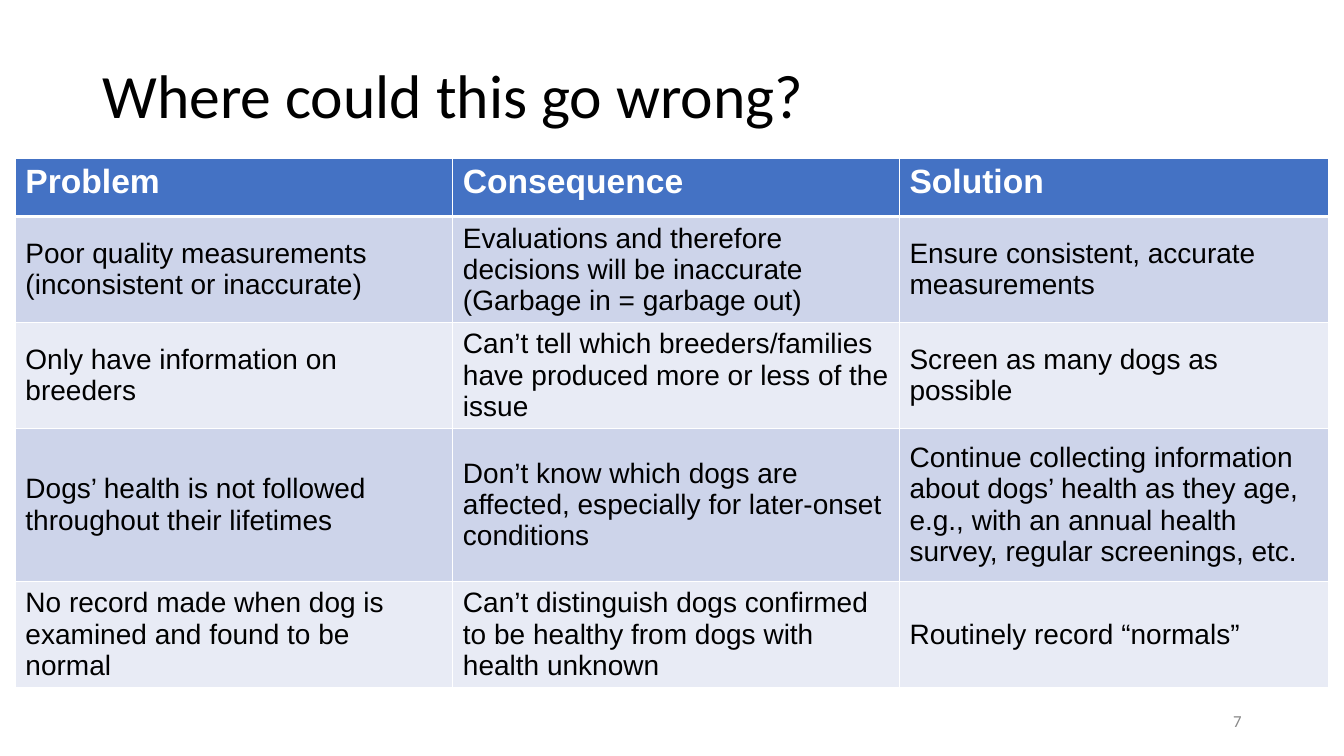
"""Build the slide on what can go wrong when screening dogs."""
from lxml import etree
from pptx import Presentation
from pptx.dml.color import RGBColor
from pptx.enum.text import MSO_ANCHOR, PP_ALIGN
from pptx.oxml.ns import qn
from pptx.util import Pt

TOP, MID = MSO_ANCHOR.TOP, MSO_ANCHOR.MIDDLE
LEFT, RIGHT = PP_ALIGN.LEFT, PP_ALIGN.RIGHT

TITLE = "Where could this go wrong?"
NUMBER = "7"
ROWS = [
    ("Problem", "Consequence", "Solution"),
    ("Poor quality measurements\n(inconsistent or inaccurate)",
     "Evaluations and therefore decisions will be inaccurate\n(Garbage in = garbage out)",
     "Ensure consistent, accurate measurements"),
    ("Only have information on breeders",
     "Can’t tell which breeders/families have produced more or less of the issue",
     "Screen as many dogs as possible"),
    ("Dogs’ health is not followed throughout their lifetimes",
     "Don’t know which dogs are affected, especially for later-onset conditions",
     "Continue collecting information about dogs’ health as they age, "
     "e.g., with an annual health survey, regular screenings, etc."),
    ("No record made when dog is examined and found to be normal",
     "Can’t distinguish dogs confirmed to be healthy from dogs with health unknown",
     "Routinely record “normals”"),
]
WIDTHS = (312.5, 319, 306.5)
HEIGHTS = (41.75, 75.6, 75.6, 109.5, 75.6)
COLORS = {"head": "4472C4", "odd": "CDD4EA", "even": "E8EBF5",
          "white": "FFFFFF", "black": "000000", "gray": "888888"}


def write(frame, text, size, font="Arial", color="black", bold=False,
          align=LEFT, anchor=MID, space=1.0):
    frame.text = text
    frame.word_wrap = True
    frame.vertical_anchor = anchor
    for para in frame.paragraphs:
        para.alignment = align
        para.line_spacing = space
        for run in para.runs:
            run.font.size = Pt(size)
            run.font.name = font
            run.font.bold = bold
            run.font.color.rgb = RGBColor.from_string(COLORS[color])


def border(cell, base):
    props = cell._tc.get_or_add_tcPr()
    sides = {"lnL": 1, "lnR": 1, "lnT": 1, "lnB": base}
    for spot, (side, width) in enumerate(sides.items()):
        line = etree.Element(qn("a:" + side), w=str(Pt(width)))
        fill = etree.SubElement(line, qn("a:solidFill"))
        etree.SubElement(fill, qn("a:srgbClr"), val=COLORS["white"])
        props.insert(spot, line)


def place(shape, left, top, width, height):
    shape.left, shape.top = Pt(left), Pt(top)
    shape.width, shape.height = Pt(width), Pt(height)


def add_grid(slide):
    frame = slide.shapes.add_table(len(ROWS), len(WIDTHS), Pt(11), Pt(113),
                                   Pt(sum(WIDTHS)), Pt(sum(HEIGHTS)))
    grid = frame.table
    for col, width in zip(grid.columns, WIDTHS):
        col.width = Pt(width)
    for r, (row, height) in enumerate(zip(ROWS, HEIGHTS)):
        grid.rows[r].height = Pt(height)
        head = r == 0
        shade = "head" if head else "odd" if r % 2 else "even"
        for c, text in enumerate(row):
            cell = grid.cell(r, c)
            write(cell.text_frame, text, 24 if head else 20, bold=head,
                  color="white" if head else "black")
            cell.vertical_anchor = TOP if head else MID
            cell.fill.solid()
            cell.fill.fore_color.rgb = RGBColor.from_string(COLORS[shade])
            border(cell, 3 if head else 1)
            if r == 1:
                top = cell._tc.tcPr.find(qn("a:lnT"))
                top.set("w", str(Pt(3)))


def main():
    deck = Presentation()
    deck.slide_width, deck.slide_height = Pt(960), Pt(540)
    slide = deck.slides.add_slide(deck.slide_layouts[5])
    title = slide.shapes.title
    place(title, 66, 18, 828, 104.4)
    write(title.text_frame, TITLE, 44, font="Calibri", space=0.9)
    add_grid(slide)
    number = slide.shapes.add_textbox(Pt(678), Pt(500.5), Pt(216), Pt(28.75))
    write(number.text_frame, NUMBER, 12, font="Calibri", color="gray", align=RIGHT)
    deck.save("out.pptx")


if __name__ == "__main__":
    main()
